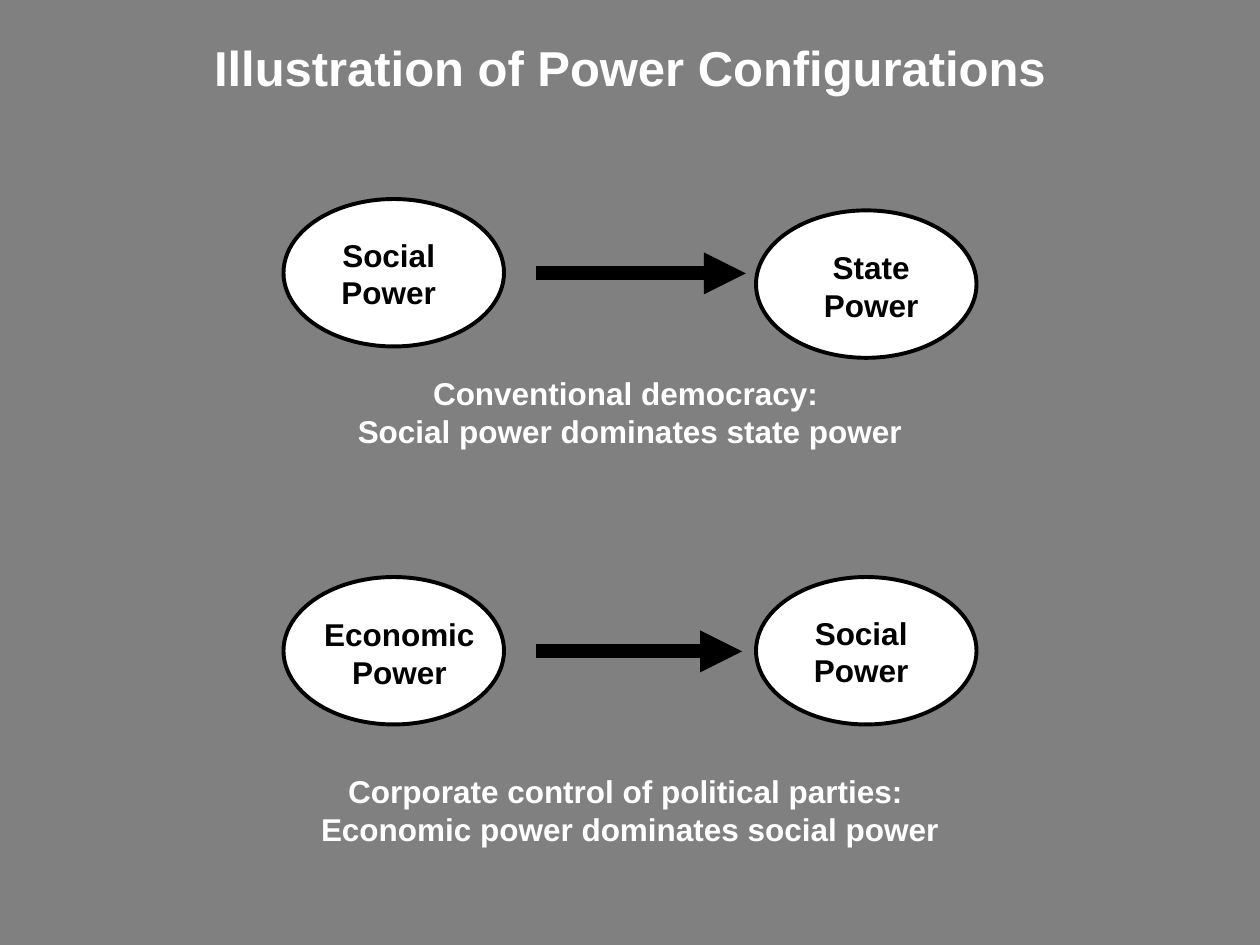
import pptx
import pptx.dml.color
import pptx.enum.shapes
import pptx.enum.text
import pptx.oxml
import pptx.oxml.ns
import pptx.util
from pptx.util import Inches

BLACK = "000000"
WHITE = "FFFFFF"
GRAY = "808080"


def color(value):
    return pptx.dml.color.RGBColor.from_string(value)


def add_text(shapes, text, left, top, width, height, size=18, fill=WHITE):
    box = shapes.add_textbox(Inches(left), Inches(top), Inches(width), Inches(height))
    frame = box.text_frame
    frame.word_wrap = True
    for index, line in enumerate(text.split("\n")):
        para = frame.paragraphs[0] if index == 0 else frame.add_paragraph()
        para.alignment = pptx.enum.text.PP_ALIGN.CENTER
        span = para.add_run()
        span.text = line
        span.font.name = "Arial"
        span.font.size = pptx.util.Pt(size)
        span.font.bold = True
        span.font.color.rgb = color(fill)


def add_power(page, text, left, top, label_left, label_top, label_width, label_height):
    group = page.shapes.add_group_shape()
    oval = group.shapes.add_shape(
        pptx.enum.shapes.MSO_SHAPE.OVAL,
        Inches(left), Inches(top), Inches(1.75), Inches(1.17))
    oval.shadow.inherit = False
    oval.fill.solid()
    oval.fill.fore_color.rgb = color(WHITE)
    oval.line.color.rgb = color(BLACK)
    oval.line.width = pptx.util.Pt(2.25)
    add_text(group.shapes, text, label_left, label_top, label_width, label_height, fill=BLACK)


def add_arrow(page, start, end, height):
    arrow = page.shapes.add_connector(
        pptx.enum.shapes.MSO_CONNECTOR.STRAIGHT,
        Inches(start), Inches(height), Inches(end), Inches(height))
    arrow.line.color.rgb = color(BLACK)
    arrow.line.width = pptx.util.Pt(8)
    head = pptx.oxml.parse_xml(
        f'<a:tailEnd {pptx.oxml.ns.nsdecls("a")} type="triangle"/>')
    arrow.line._get_or_add_ln().append(head)
    effects = pptx.oxml.parse_xml(f'<a:effectLst {pptx.oxml.ns.nsdecls("a")}/>')
    arrow._element.spPr.append(effects)


def main():
    deck = pptx.Presentation()
    deck.slide_width = Inches(10)
    deck.slide_height = Inches(7.5)
    page = deck.slides.add_slide(deck.slide_layouts[6])
    page.background.fill.solid()
    page.background.fill.fore_color.rgb = color(GRAY)

    add_text(page.shapes, "Illustration of Power Configurations", 0, 0.25, 10, 0.57, size=28)
    captions = [
        ("Conventional democracy: \nSocial power dominates state power", 2.92),
        ("Corporate control of political parties: \nEconomic power dominates social power", 6.08),
    ]
    for text, top in captions:
        add_text(page.shapes, text, 0, top, 10, 0.71)

    powers = [
        ("Economic\nPower", 2.25, 4.58, 2.42, 4.83, 1.5, 0.68),
        ("Social Power", 2.25, 1.58, 2.42, 1.82, 1.33, 0.55),
        ("State Power", 6, 1.67, 6.25, 1.92, 1.33, 0.37),
        ("Social Power", 6, 4.58, 6.17, 4.82, 1.33, 0.55),
    ]
    for power in powers:
        add_power(page, *power)

    add_arrow(page, 4.25, 5.92, 2.17)
    add_arrow(page, 4.25, 5.89, 5.17)
    deck.save("out.pptx")


if __name__ == "__main__":
    main()
